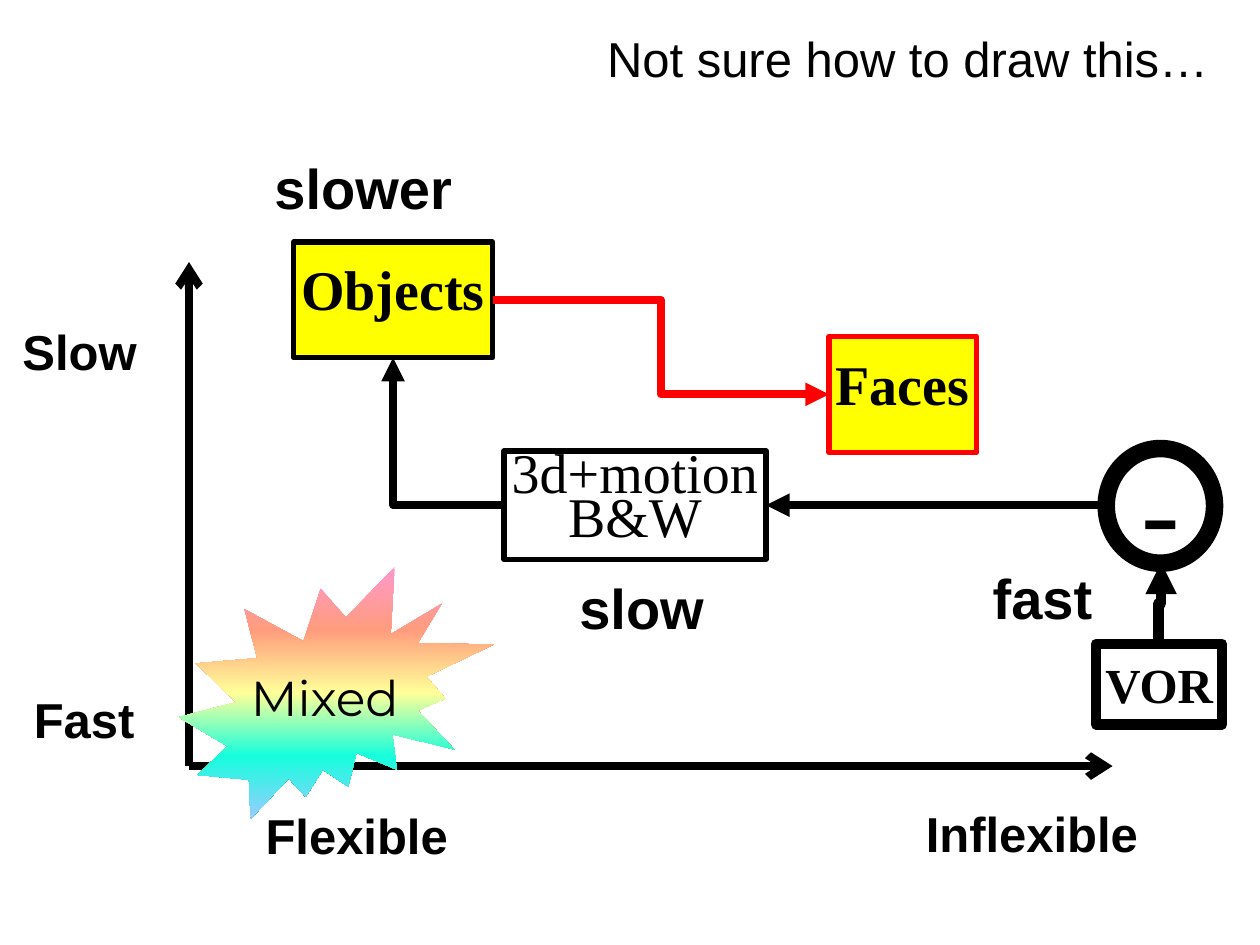
import pptx
import pptx.util
import pptx.dml.color
import pptx.enum.shapes
import pptx.enum.text
import pptx.oxml
import pptx.oxml.ns
import lxml.etree

Inches = pptx.util.Inches
Pt = pptx.util.Pt
RGBColor = pptx.dml.color.RGBColor
SHAPE = pptx.enum.shapes.MSO_SHAPE
CONNECTOR = pptx.enum.shapes.MSO_CONNECTOR
ALIGN = pptx.enum.text.PP_ALIGN
qn = pptx.oxml.ns.qn

BLACK = RGBColor(0, 0, 0)
RED = RGBColor(255, 0, 0)
YELLOW = RGBColor(255, 255, 0)
RAINBOW = [
    RGBColor(0xFF, 0x99, 0xCC),
    RGBColor(0xFF, 0x9C, 0x7D),
    RGBColor(0xFF, 0xFF, 0x99),
    RGBColor(0x16, 0xFE, 0xDD),
    RGBColor(0x99, 0xCC, 0xFF),
]
SANS = "Arial"
SERIF = "Times New Roman"
TOP, LEFT, BOTTOM, RIGHT = range(4)


class Diagram:
    def __init__(self, page):
        self.page = page

    def set_text(self, box, text, size, font, bold, align=None, spacing=None):
        frame = box.text_frame
        frame.text = text
        frame.word_wrap = False
        for para in frame.paragraphs:
            para.alignment = align
            para.line_spacing = spacing
            for span in para.runs:
                span.font.size = Pt(size)
                span.font.name = font
                span.font.bold = bold
                span.font.color.rgb = BLACK

    def label(self, text, left, top, width, height, size=28, bold=True):
        box = self.page.shapes.add_textbox(
            Inches(left), Inches(top), Inches(width), Inches(height))
        self.set_text(box, text, size, SANS, bold)
        box.text_frame.auto_size = pptx.enum.text.MSO_AUTO_SIZE.SHAPE_TO_FIT_TEXT

    def node(self, text, left, top, width, height, kind=SHAPE.RECTANGLE, fill=None,
             line=BLACK, weight=3, size=32, font=SERIF, bold=True, spacing=None):
        box = self.page.shapes.add_shape(
            kind, Inches(left), Inches(top), Inches(width), Inches(height))
        box.shadow.inherit = False
        if fill is None:
            box.fill.background()
        else:
            box.fill.solid()
            box.fill.fore_color.rgb = fill
        if line is None:
            box.line.fill.background()
        else:
            box.line.color.rgb = line
            box.line.width = Pt(weight)
        self.set_text(box, text, size, font, bold, ALIGN.CENTER, spacing)
        box.text_frame.vertical_anchor = pptx.enum.text.MSO_ANCHOR.MIDDLE
        return box

    def gradient(self, box, colors):
        box.fill.gradient()
        grad = box._element.spPr.find(qn("a:gradFill"))
        stops = grad.find(qn("a:gsLst"))
        for stop in list(stops):
            stops.remove(stop)
        for index, color in enumerate(colors):
            stop = lxml.etree.SubElement(stops, qn("a:gs"))
            stop.set("pos", str(index * 100000 // (len(colors) - 1)))
            lxml.etree.SubElement(stop, qn("a:srgbClr")).set("val", str(color))
        grad.find(qn("a:lin")).set("ang", "5400000")

    def arrow(self, start, end, kind=CONNECTOR.ELBOW, color=BLACK, weight=4.5,
              head="triangle", source=None, target=None, preset=None, turn=0):
        link = self.page.shapes.add_connector(
            kind, Inches(start[0]), Inches(start[1]), Inches(end[0]), Inches(end[1]))
        link.line.color.rgb = color
        link.line.width = Pt(weight)
        properties = link._element.spPr
        line = properties.find(qn("a:ln"))
        lxml.etree.SubElement(line, qn("a:tailEnd")).set("type", head)
        lxml.etree.SubElement(properties, qn("a:effectLst"))
        if source:
            link.begin_connect(*source)
        if target:
            link.end_connect(*target)
        if preset:
            properties.find(qn("a:prstGeom")).set("prst", preset)
        if turn:
            properties.find(qn("a:xfrm")).set("rot", str(turn * 60000))


def main():
    deck = pptx.Presentation()
    deck.slide_width = Inches(10)
    deck.slide_height = Inches(7.5)
    diagram = Diagram(deck.slides.add_slide(deck.slide_layouts[6]))

    diagram.node("-", 8.78, 3.56, 0.86, 0.91, SHAPE.OVAL, weight=10, size=66, bold=False)
    motion = diagram.node("3d+motion\nB&W", 4, 3.58, 2.08, 0.86, bold=False, spacing=Pt(25))
    diagram.arrow((8.78, 4.01), (6.08, 4.01), target=(motion, RIGHT))
    diagram.arrow((9.53, 4.8), (8.88, 4.78), weight=6, turn=90)
    diagram.node("VOR", 8.7, 5.11, 1, 0.64, weight=6, size=28)

    origin = (1.5, 6.08)
    for tip in [(1.5, 2.08), (8.83, 6.08)]:
        diagram.arrow(origin, tip, CONNECTOR.STRAIGHT, head="arrow")

    for text, left, top, width in [
        ("Fast", 0.17, 5.42, 1.01),
        ("Slow", 0.08, 2.5, 1.12),
        ("Flexible", 2.01, 6.34, 1.67),
        ("Inflexible", 7.25, 6.33, 1.91),
    ]:
        diagram.label(text, left, top, width, 0.57)
    for text, left, top, width in [
        ("slow", 4.5, 4.5, 1.2),
        ("fast", 7.78, 4.42, 1),
        ("slower", 2.08, 1.17, 1.62),
    ]:
        diagram.label(text, left, top, width, 0.64, size=32)

    faces = diagram.node("Faces", 6.58, 2.67, 1.17, 0.92, fill=YELLOW, line=RED, spacing=Pt(25))
    objects = diagram.node("Objects", 2.33, 1.92, 1.58, 0.92, fill=YELLOW, spacing=Pt(25))
    diagram.arrow((4, 4.01), (3.12, 2.83), source=(motion, LEFT),
                  target=(objects, BOTTOM), preset="bentConnector2")
    mixed = diagram.node("Mixed", 1.42, 4.5, 2.5, 2, SHAPE.EXPLOSION2, line=None,
                         size=28, font="Montserrat", bold=False)
    diagram.gradient(mixed, RAINBOW)
    diagram.arrow((3.92, 2.38), (6.58, 3.12), color=RED,
                  source=(objects, RIGHT), target=(faces, LEFT))
    diagram.label("Not sure how to draw this…", 4.72, 0.18, 5.03, 0.57, bold=False)

    deck.save("out.pptx")


if __name__ == "__main__":
    main()
